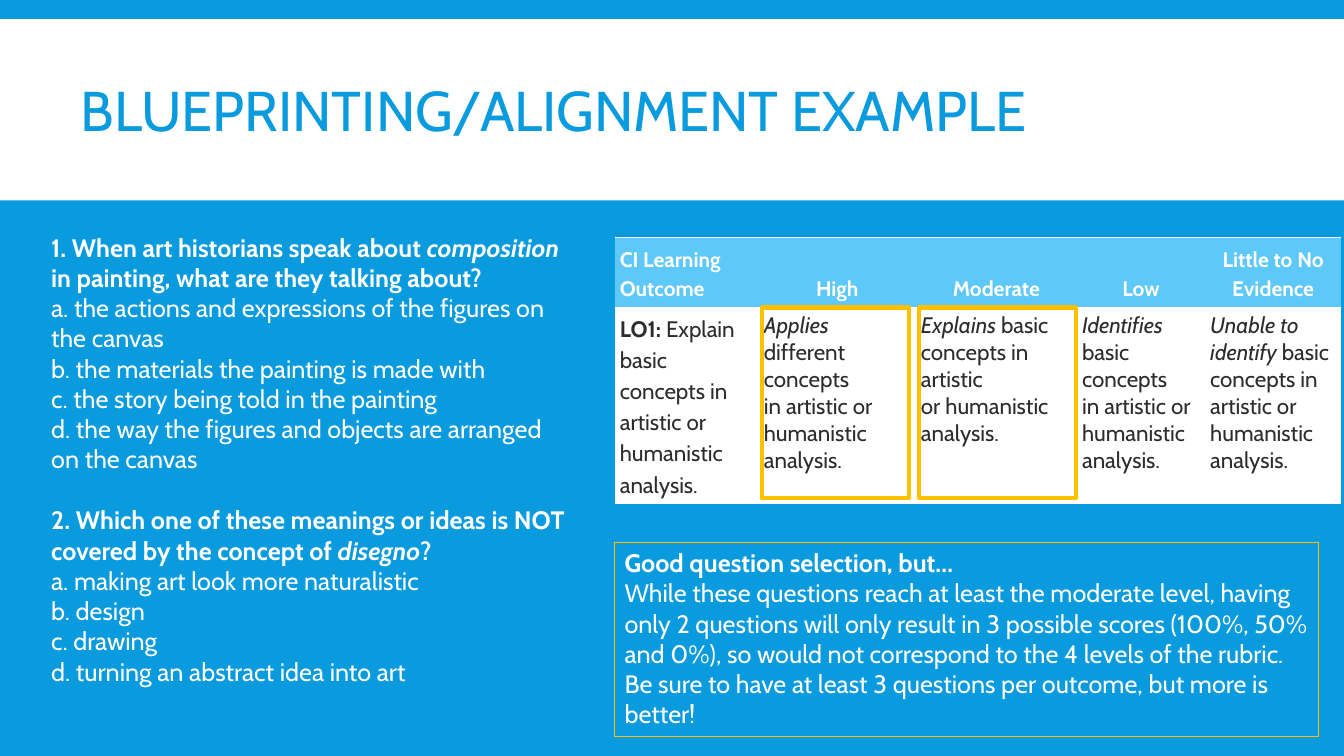
from lxml.etree import SubElement
from pptx import Presentation
from pptx.dml.color import RGBColor
from pptx.enum.shapes import MSO_SHAPE
from pptx.enum.text import MSO_ANCHOR, MSO_AUTO_SIZE, PP_ALIGN
from pptx.oxml.ns import qn
from pptx.util import Cm, Pt

FONT = "Cabin"
BLUE, SKY, WHITE = "099BDD", "5EC8F8", "FFFFFF"
GOLD, DARK = "FFC000", "2C2C2C"

# Each paragraph is a list of (text, style) runs; b is bold, i is italic
FIRST = [
    [("1. When art historians speak about ", "b"), ("composition", "bi"),
     (" in painting, what are they talking about?", "b")],
    [("a. the actions and expressions of the figures on the canvas", "")],
    [("b. the materials the painting is made with", "")],
    [("c. the story being told in the painting", "")],
    [("d. the way the figures and objects are arranged on the canvas", "")],
]
SECOND = [
    [("2. Which one of these meanings or ideas is NOT covered by the concept of ", "b"),
     ("disegno", "bi"), ("?", "b")],
    [("a. making art look more naturalistic", "")],
    [("b. design", "")],
    [("c. drawing", "")],
    [("d. turning an abstract idea into art", "")],
]
ADVICE = [
    [("Good question selection, but…", "b")],
    [("While these questions reach at least the moderate level, having only 2 "
      "questions will only result in 3 possible scores (100%, 50% and 0%), so "
      "would not correspond to the 4 levels of the rubric.", "")],
    [("Be sure to have at least 3 questions per outcome, but more is better!", "")],
]
HEADS = ["CI Learning Outcome", "High", "Moderate", "Low", "Little to No Evidence"]
LEVELS = [
    [[("LO1: ", "b"),
      ("Explain basic concepts in artistic or humanistic analysis.", "")]],
    [[("Applies", "i"), (" different concepts", "")],
     [("in artistic or humanistic", "")], [("analysis.", "")]],
    [[("Explains", "i"), (" basic concepts in artistic", "")],
     [("or humanistic analysis.", "")]],
    [[("Identifies", "i"), (" basic concepts", "")],
     [("in artistic or humanistic", "")], [("analysis.", "")]],
    [[("Unable to identify ", "i"), ("basic", "")],
     [("concepts in artistic or", "")], [("humanistic analysis.", "")]],
]
WIDTHS = [3.63, 3.96, 4.06, 3.23, 3.43]


def paint(hue):
    return RGBColor.from_string(hue)


def write(frame, paras, size, hue, align=PP_ALIGN.LEFT, pitch=1.0):
    frame.word_wrap = True
    for at, runs in enumerate(paras):
        para = frame.add_paragraph() if at else frame.paragraphs[0]
        para.alignment, para.line_spacing = align, pitch
        for text, style in runs:
            run = para.add_run()
            run.text = text
            font = run.font
            font.name, font.size = FONT, Pt(size)
            font.bold, font.italic = "b" in style, "i" in style
            font.color.rgb = paint(hue)


def add_box(slide, left, top, width, height, fill=None, line=None, weight=1):
    box = slide.shapes.add_shape(
        MSO_SHAPE.RECTANGLE, Cm(left), Cm(top), Cm(width), Cm(height))
    box.shadow.inherit = False
    if fill:
        box.fill.solid()
        box.fill.fore_color.rgb = paint(fill)
    else:
        box.fill.background()
    if line:
        box.line.color.rgb = paint(line)
        box.line.width = Pt(weight)
    else:
        box.line.fill.background()
    return box


def add_title(slide, text):
    title = slide.shapes.title
    title.left, title.top = Cm(1.78), Cm(0.79)
    title.width, title.height = Cm(30.73), Cm(4.19)
    frame = title.text_frame
    frame.auto_size = MSO_AUTO_SIZE.NONE
    frame.vertical_anchor = MSO_ANCHOR.MIDDLE
    write(frame, [[(text, "")]], 40, BLUE, pitch=0.85)
    return title


def set_edges(cell, shown):
    """Draw one side of a cell in white and clear the others."""
    props = cell._tc.get_or_add_tcPr()
    for side in ("lnL", "lnR", "lnT", "lnB"):
        edge = SubElement(props, qn(f"a:{side}"), w=str(Pt(1)))
        if side == shown:
            fill = SubElement(edge, qn("a:solidFill"))
            SubElement(fill, qn("a:srgbClr"), val=WHITE)
        else:
            SubElement(edge, qn("a:noFill"))


def fill_cell(cell, paras, size, hue, back, edge, align, pitch):
    set_edges(cell, edge)
    cell.fill.solid()
    cell.fill.fore_color.rgb = paint(back)
    cell.margin_left = cell.margin_right = Cm(0.13)
    cell.margin_top = cell.margin_bottom = Cm(0.13)
    write(cell.text_frame, paras, size, hue, align, pitch)


def add_rubric(slide):
    table = slide.shapes.add_table(
        2, len(HEADS), Cm(15.49), Cm(5.99), Cm(sum(WIDTHS)), Cm(6.67)).table
    table.first_row = table.horz_banding = False
    table.rows[0].height, table.rows[1].height = Cm(1.72), Cm(4.95)
    for at, (head, level) in enumerate(zip(HEADS, LEVELS)):
        table.columns[at].width = Cm(WIDTHS[at])
        top = table.cell(0, at)
        align = PP_ALIGN.CENTER if at else PP_ALIGN.LEFT
        fill_cell(top, [[(head, "b")]], 15, WHITE, SKY, "lnT", align, 1.15)
        top.vertical_anchor = MSO_ANCHOR.BOTTOM
        fill_cell(table.cell(1, at), level, 16, DARK, WHITE, "lnB",
                  PP_ALIGN.LEFT, 1.0 if at else 1.15)


def add_quiz(slide):
    box = slide.shapes.add_textbox(Cm(1.04), Cm(5.72), Cm(13.49), Cm(12.57))
    write(box.text_frame, FIRST + SECOND, 18, WHITE)
    box.text_frame.paragraphs[len(FIRST)].space_before = Pt(22)


def add_advice(slide):
    box = add_box(slide, 15.49, 13.67, 17.75, 4.88, line=GOLD, weight=0.75)
    box.text_frame.vertical_anchor = MSO_ANCHOR.TOP
    write(box.text_frame, ADVICE, 18, WHITE)


def main():
    deck = Presentation()
    deck.slide_width, deck.slide_height = Cm(33.87), Cm(19.05)
    slide = deck.slides.add_slide(deck.slide_layouts[5])
    slide.background.fill.solid()
    slide.background.fill.fore_color.rgb = paint(BLUE)

    # Title on its white band
    title = add_title(slide, "BLUEPRINTING/ALIGNMENT EXAMPLE")
    band = add_box(slide, 0, 0.48, 33.87, 4.57, fill=WHITE)
    title.element.addprevious(band.element)

    # Rubric with the two reached levels framed
    add_rubric(slide)
    for left, width in ((19.2, 3.71), (23.16, 3.96)):
        add_box(slide, left, 7.75, width, 4.8, line=GOLD, weight=3)

    # Advice and quiz questions
    add_advice(slide)
    add_quiz(slide)
    deck.save("out.pptx")


if __name__ == "__main__":
    main()
